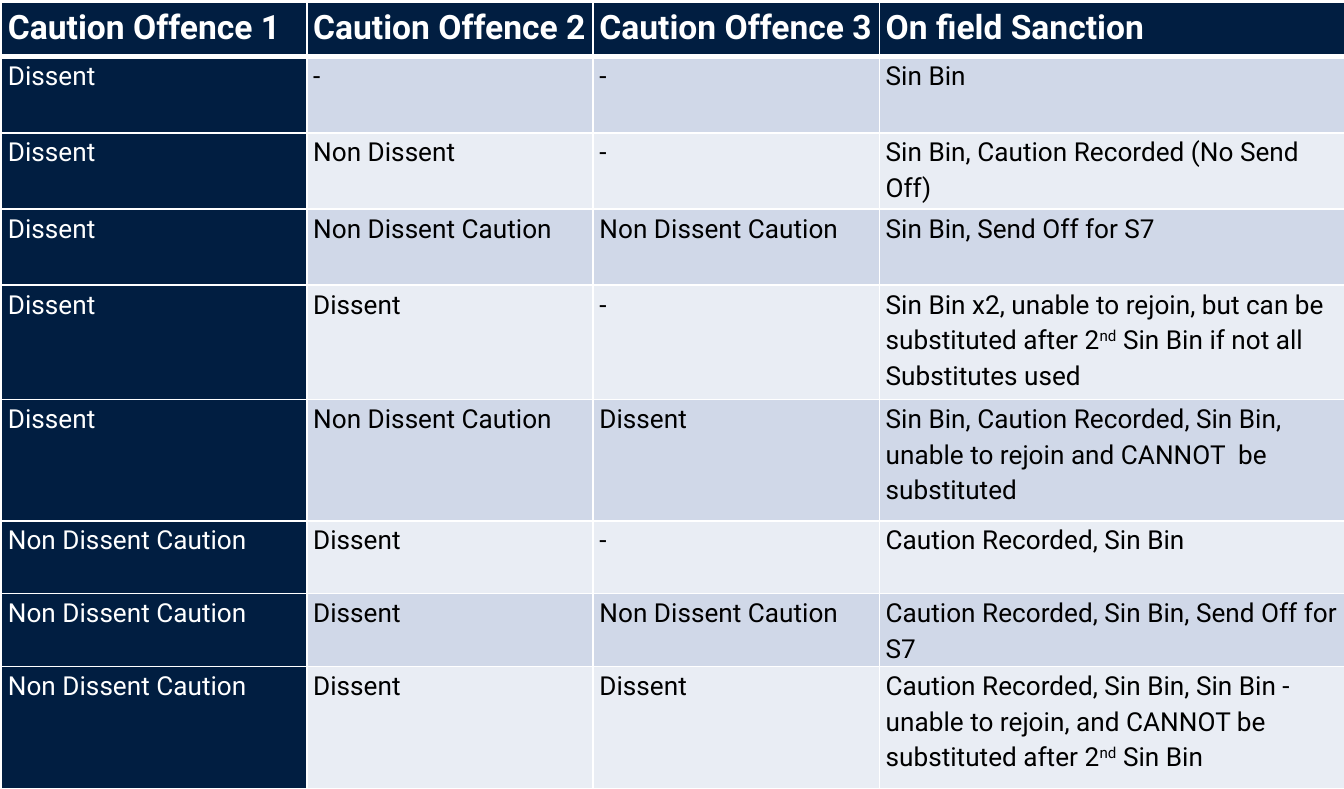
from dataclasses import dataclass

from lxml.etree import SubElement
from pptx import Presentation
from pptx.dml.color import RGBColor
from pptx.oxml.ns import qn
from pptx.table import _Cell as Cell
from pptx.util import Cm, Pt

NAVY = RGBColor(0x01, 0x1E, 0x41)
BLUE_BAND = RGBColor(0xD0, 0xD8, 0xE8)
PALE_BAND = RGBColor(0xE9, 0xED, 0xF4)
WHITE = RGBColor(0xFF, 0xFF, 0xFF)
BLACK = RGBColor(0x00, 0x00, 0x00)

FONT = "Roboto"
COLUMN_WIDTHS = (5.77, 5.41, 5.41, 8.79)
HEADER_HEIGHT = 1.02
HEADINGS = ("Caution Offence 1", "Caution Offence 2", "Caution Offence 3", "On field Sanction")


@dataclass(frozen=True)
class Ruling:
    """One combination of cautions; ^marks^ enclose superscript."""
    height: float
    first: str
    second: str
    third: str
    sanction: str

    @property
    def texts(self) -> tuple[str, ...]:
        return self.first, self.second, self.third, self.sanction


DISSENT = "Dissent"
OTHER = "Non Dissent Caution"
RULINGS = (
    Ruling(1.44, DISSENT, "-", "-", "Sin Bin"),
    Ruling(1.44, DISSENT, "Non Dissent", "-", "Sin Bin, Caution Recorded (No Send Off)"),
    Ruling(1.44, DISSENT, OTHER, OTHER, "Sin Bin, Send Off for S7"),
    Ruling(1.44, DISSENT, DISSENT, "-",
           "Sin Bin x2, unable to rejoin, but can be substituted after 2^nd^ Sin Bin "
           "if not all Substitutes used"),
    Ruling(2.29, DISSENT, OTHER, DISSENT,
           "Sin Bin, Caution Recorded, Sin Bin, unable to rejoin and CANNOT  be substituted"),
    Ruling(1.38, OTHER, DISSENT, "-", "Caution Recorded, Sin Bin"),
    Ruling(1.38, OTHER, DISSENT, OTHER, "Caution Recorded, Sin Bin, Send Off for S7"),
    Ruling(2.3, OTHER, DISSENT, DISSENT,
           "Caution Recorded, Sin Bin, Sin Bin - unable to rejoin, and CANNOT be "
           "substituted after 2^nd^ Sin Bin"),
)


def write_text(cell: Cell, text: str, *, size: float = 14, color: RGBColor = BLACK,
               bold: bool = False) -> None:
    paragraph = cell.text_frame.paragraphs[0]
    paragraph.line_spacing = 1.15
    for index, part in enumerate(text.split("^")):
        run = paragraph.add_run()
        run.text = part
        run.font.name = FONT
        run.font.size = Pt(size)
        run.font.bold = bold
        run.font.color.rgb = color
        if index % 2:
            run._r.get_or_add_rPr().set("baseline", "30000")


def draw_borders(cell: Cell, *, top: float = 1, bottom: float = 1) -> None:
    properties = cell._tc.get_or_add_tcPr()
    for side, width in (("L", 1), ("R", 1), ("T", top), ("B", bottom)):
        line = SubElement(properties, qn(f"a:ln{side}"), w=str(Pt(width)))
        solid = SubElement(line, qn("a:solidFill"))
        SubElement(solid, qn("a:srgbClr"), val=str(WHITE))


def format_cell(cell: Cell, fill: RGBColor) -> None:
    cell.margin_left = cell.margin_right = Cm(0.12)
    cell.margin_top = cell.margin_bottom = 0
    cell.fill.solid()
    cell.fill.fore_color.rgb = fill


def main() -> None:
    presentation = Presentation()
    presentation.slide_width = Cm(25.4)
    presentation.slide_height = Cm(14.91)
    slide = presentation.slides.add_slide(presentation.slide_layouts[6])

    # Sanctions grid
    heights = (HEADER_HEIGHT, *(
        2.16 if ruling is RULINGS[3] else ruling.height for ruling in RULINGS))
    sanctions = slide.shapes.add_table(
        len(heights), len(COLUMN_WIDTHS), Cm(0.03), Cm(0.05),
        Cm(sum(COLUMN_WIDTHS)), Cm(sum(heights))).table
    for column, width in zip(sanctions.columns, COLUMN_WIDTHS):
        column.width = Cm(width)
    for row, height in zip(sanctions.rows, heights):
        row.height = Cm(height)

    # Header row
    for cell, heading in zip(sanctions.rows[0].cells, HEADINGS):
        draw_borders(cell, bottom=3)
        format_cell(cell, NAVY)
        write_text(cell, heading, size=18, color=WHITE, bold=True)

    # Rulings: navy first column, alternating bands for the rest
    for number, ruling in enumerate(RULINGS, start=1):
        band = BLUE_BAND if number % 2 else PALE_BAND
        for column, text in enumerate(ruling.texts):
            cell = sanctions.cell(number, column)
            draw_borders(cell, top=3 if number == 1 else 1)
            format_cell(cell, band if column else NAVY)
            write_text(cell, text, color=BLACK if column else WHITE)

    presentation.save("out.pptx")


if __name__ == "__main__":
    main()
